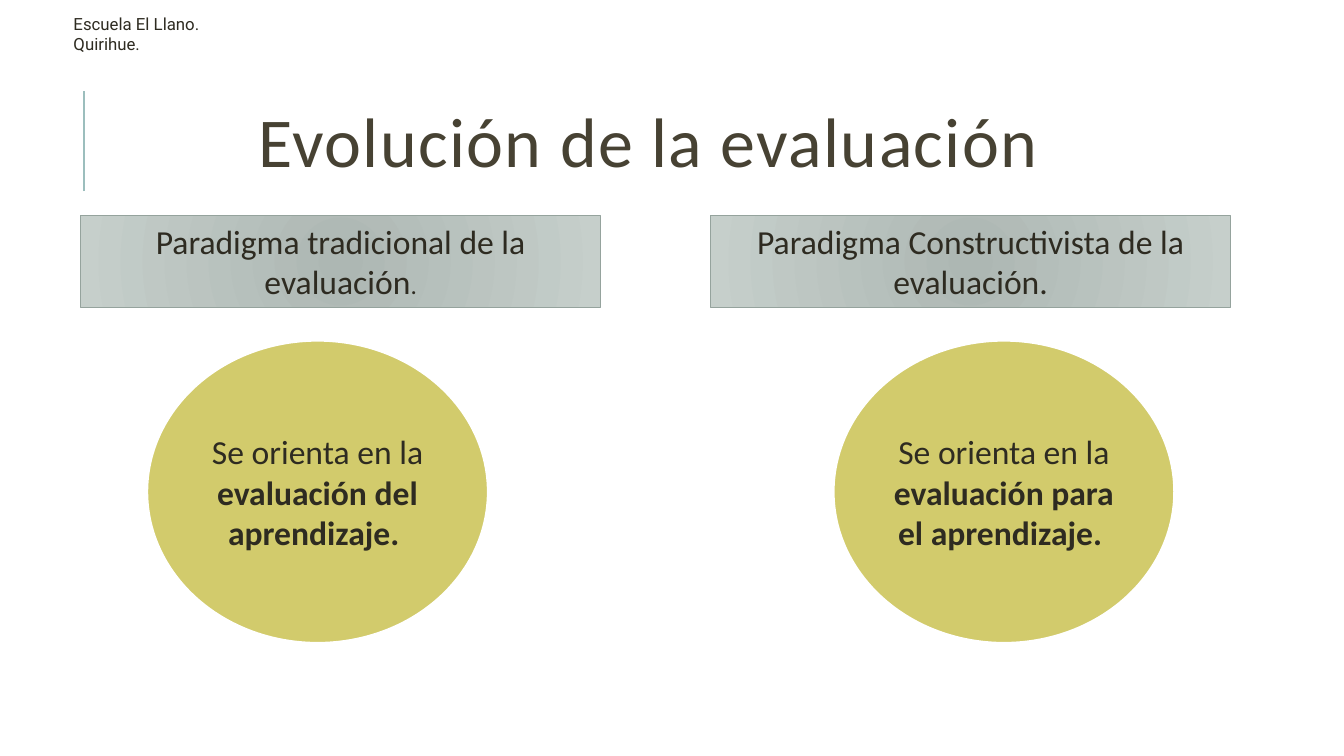
from lxml.etree import SubElement
from pptx import Presentation
from pptx.dml.color import RGBColor
from pptx.enum.shapes import MSO_CONNECTOR, MSO_SHAPE
from pptx.enum.text import MSO_ANCHOR, PP_ALIGN
from pptx.oxml.ns import qn
from pptx.util import Pt

INK = "2E2B21"


def rgb(value):
    """Turn a hex string into a colour."""
    return RGBColor.from_string(value)


def add_run(p, text, size, color=INK, font="Calibri", bold=False):
    """Append a formatted run to a paragraph."""
    r = p.add_run()
    r.text = text
    r.font.size = Pt(size)
    r.font.name = font
    r.font.bold = bold
    r.font.color.rgb = rgb(color)
    return r


def prepare_text(sp, anchor):
    """Make the text of a shape wrap, with the given anchor."""
    tf = sp.text_frame
    tf.word_wrap = True
    tf.vertical_anchor = anchor
    return tf


def add_block(s, kind, box, line_color, line_width, anchor, runs):
    """Draw an outlined shape with centred runs of (text, size, bold)."""
    sp = s.shapes.add_shape(kind, *map(Pt, box))
    sp.shadow.inherit = False
    sp.line.color.rgb = rgb(line_color)
    sp.line.width = Pt(line_width)
    p = prepare_text(sp, anchor).paragraphs[0]
    p.alignment = PP_ALIGN.CENTER
    for text, size, bold in runs:
        add_run(p, text, size, bold=bold)
    return sp


def add_school(s, x, y, w, h):
    """Write the school name at the top left."""
    tf = prepare_text(s.shapes.add_textbox(Pt(x), Pt(y), Pt(w), Pt(h)), MSO_ANCHOR.TOP)
    add_run(tf.paragraphs[0], "Escuela El Llano.", 12, font="Roboto")
    add_run(tf.add_paragraph(), "Quirihue.", 12, font="Roboto")


def add_title(s, x, y, w, h):
    """Write the title beside its vertical rule."""
    rule_x = Pt(x - 20.5)
    rule = s.shapes.add_connector(
        MSO_CONNECTOR.STRAIGHT, rule_x, Pt(y + 90.5), rule_x, Pt(y + 19))
    rule.line.color.rgb = rgb("9CBEBD")
    rule.line.width = Pt(1.5)
    SubElement(rule._element.spPr, qn("a:effectLst"))
    sp = s.shapes.add_textbox(Pt(x), Pt(y), Pt(w), Pt(h))
    p = prepare_text(sp, MSO_ANCHOR.MIDDLE).paragraphs[0]
    p.alignment = PP_ALIGN.CENTER
    p.line_spacing = 0.8
    r = add_run(p, "Evolución de la evaluación", 50, "474233")
    r.font._element.set("spc", "100")


def add_paradigm(s, x, y, w, h, circle_dx, heading, focus):
    """Draw a paradigm heading with its circle below."""
    sp = add_block(s, MSO_SHAPE.RECTANGLE, (x, y, w, h), "95A39D", 0.75,
                   MSO_ANCHOR.TOP, heading)
    sp.fill.gradient()
    for stop, color in zip(sp.fill.gradient_stops, ("ADB7B3", "C6CFCB")):
        stop.color.rgb = rgb(color)
    grad = sp._element.spPr.find(qn("a:gradFill"))
    grad.remove(grad.find(qn("a:lin")))
    radial = SubElement(grad, qn("a:path"), {"path": "circle"})
    SubElement(radial, qn("a:fillToRect"), dict.fromkeys("ltrb", "100000"))

    circle = add_block(s, MSO_SHAPE.OVAL, (x + circle_dx, y + 89.3, 243.4, 216),
                       "FFFFFF", 1.5, MSO_ANCHOR.MIDDLE,
                       [("Se orienta en la ", 24, False), (focus, 24, True)])
    circle.fill.solid()
    circle.fill.fore_color.rgb = rgb("D2CB6C")


def main():
    """Build and save the slide."""
    prs = Presentation()
    prs.slide_width, prs.slide_height = Pt(960), Pt(540)
    s = prs.slides.add_slide(prs.slide_layouts[6])
    add_school(s, 45.4, 6.5, 256, 36)
    add_title(s, 80.5, 46, 765.5, 118)
    add_paradigm(s, 57.6, 154, 371.5, 65.5, 47.5,
                 [("Paradigma tradicional de la evaluación", 24, False), (".", 18, False)],
                 "evaluación del aprendizaje. ")
    add_paradigm(s, 507.6, 154, 371.5, 65.5, 87.8,
                 [("Paradigma Constructivista de la evaluación.", 24, False)],
                 "evaluación para el aprendizaje. ")
    prs.save("out.pptx")


if __name__ == "__main__":
    main()
